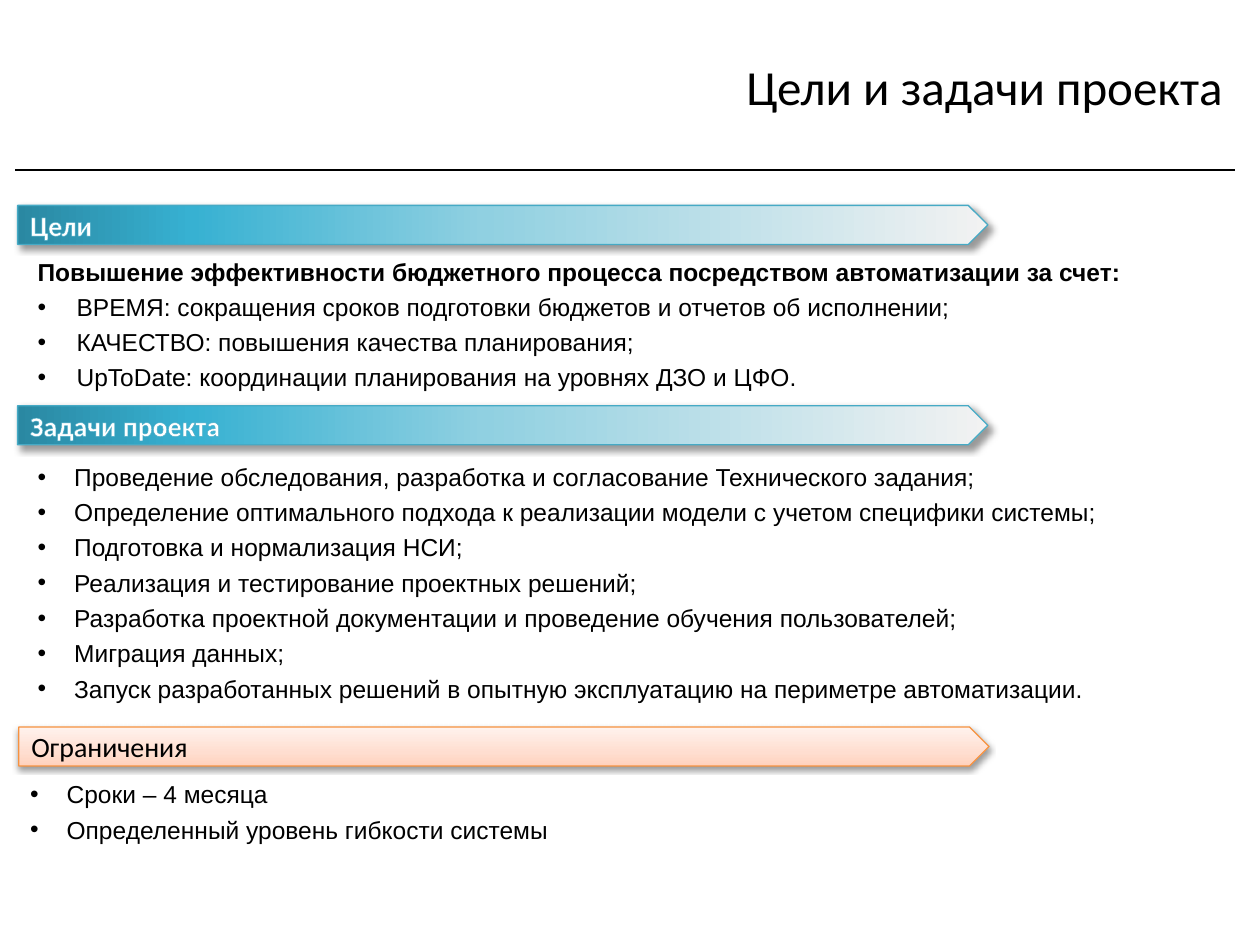
from lxml import etree
from pptx import Presentation
from pptx import util as u
from pptx.dml.color import RGBColor
from pptx.enum import shapes, text
from pptx.oxml import parse_xml
from pptx.oxml.ns import qn

NS = 'xmlns:a="http://schemas.openxmlformats.org/drawingml/2006/main"'
TEAL = [(0, "2A88A2"), (18, "37B1D2"), (48, "90D0E1"), (100, "F2F2F2")]
PEACH = [(0, "FFD2BD"), (35, "FFDED0"), (100, "FFF2ED")]


def rgb(value):
    return RGBColor.from_string(value)


class Deck:
    heading_font = "Calibri"
    body_font = "Arial"
    ink = "000000"

    def __init__(self, prs):
        self.s = prs.slides.add_slide(prs.slide_layouts[6])

    def run(self, p, words, size, font, color=None, bold=False):
        r = p.add_run()
        r.text = words
        r.font.size = u.Pt(size)
        r.font.name = font
        r.font.bold = bold
        r.font.color.rgb = rgb(color or self.ink)
        return r

    def rule(self, left, right, y):
        c = self.s.shapes.add_connector(
            shapes.MSO_CONNECTOR.STRAIGHT,
            u.Inches(left), u.Inches(y), u.Inches(right), u.Inches(y))
        c.line.color.rgb = rgb(self.ink)
        c.line.width = u.Pt(0.75)
        etree.SubElement(c._element.spPr, qn("a:effectLst"))

    def box(self, left, top, width, height):
        tf = self.s.shapes.add_textbox(
            u.Inches(left), u.Inches(top), u.Inches(width), u.Inches(height)).text_frame
        tf.word_wrap = True
        return tf

    def title(self, words, *area):
        tf = self.box(*area)
        tf.vertical_anchor = text.MSO_ANCHOR.MIDDLE
        p = tf.paragraphs[0]
        p.alignment = text.PP_ALIGN.RIGHT
        self.run(p, words, 28, self.heading_font)

    def banner(self, words, left, top, stops, angle, line, shadow, color, outline=None):
        sp = self.s.shapes.add_shape(
            shapes.MSO_SHAPE.PENTAGON,
            u.Inches(left), u.Inches(top), u.Inches(7.7), u.Inches(0.31))
        sp.line.color.rgb = rgb(line)
        sp.line.width = u.Pt(0.75)
        gs = "".join(f'<a:gs pos="{pos * 1000}"><a:srgbClr val="{c}"/></a:gs>'
                     for pos, c in stops)
        spPr = sp._element.spPr
        spPr.find(qn("a:prstGeom")).addnext(parse_xml(
            f'<a:gradFill {NS} rotWithShape="1"><a:gsLst>{gs}</a:gsLst>'
            f'<a:lin ang="{angle * 60000}" scaled="0"/></a:gradFill>'))
        alpha, blur, dist, direction = shadow
        spPr.append(parse_xml(
            f'<a:effectLst {NS}><a:outerShdw blurRad="{u.Pt(blur)}" dist="{u.Pt(dist)}" '
            f'dir="{direction * 60000}" rotWithShape="0"><a:srgbClr val="{self.ink}">'
            f'<a:alpha val="{alpha * 1000}"/></a:srgbClr></a:outerShdw></a:effectLst>'))
        tf = sp.text_frame
        tf.vertical_anchor = text.MSO_ANCHOR.MIDDLE
        p = tf.paragraphs[0]
        p.alignment = text.PP_ALIGN.LEFT
        r = self.run(p, words, 16, self.heading_font, color, bold=bool(outline))
        if outline:
            r.font._element.insert(0, parse_xml(
                f'<a:ln {NS} w="{u.Pt(0.8)}"><a:solidFill><a:srgbClr val="{outline}"/>'
                '</a:solidFill></a:ln>'))

    def bullets(self, items, left, top, width, height, indent, lead=None):
        tf = self.box(left, top, width, height)
        tf.auto_size = text.MSO_AUTO_SIZE.SHAPE_TO_FIT_TEXT
        lines = ([lead] if lead else []) + items
        for i, words in enumerate(lines):
            p = tf.add_paragraph() if i else tf.paragraphs[0]
            if words != lead:
                pPr = p._p.get_or_add_pPr()
                pPr.set("marL", str(u.Inches(indent)))
                pPr.set("indent", str(-u.Inches(indent)))
                etree.SubElement(pPr, qn("a:buFont"), typeface=self.body_font)
                etree.SubElement(pPr, qn("a:buChar"), char="•")
            p.line_spacing = 1.2
            self.run(p, words, 14, self.body_font, bold=words == lead)


def main():
    prs = Presentation()
    prs.slide_width, prs.slide_height = u.Inches(10), u.Inches(7.5)
    deck = Deck(prs)
    deck.rule(0.12, 9.8, 1.35)
    deck.title("Цели и задачи проекта", 2.68, 0.1, 7.12, 1.16)
    for words, top in (("Цели", 1.63), ("Задачи проекта", 3.22)):
        deck.banner(words, 0.14, top, TEAL, 0, "46AAC5", (40, 4, 3, 45), "FFFFFF", "4BACC6")
    deck.banner("Ограничения", 0.15, 5.77, PEACH, 270, "F69240", (38, 3.1, 1.6, 90), "000000")
    deck.bullets([
        "ВРЕМЯ: сокращения сроков подготовки бюджетов и отчетов об исполнении;",
        "КАЧЕСТВО: повышения качества планирования;",
        "UpToDate: координации планирования на уровнях ДЗО и ЦФО.",
    ], 0.2, 1.94, 9.6, 1.51, 0.31,
        lead="Повышение эффективности бюджетного процесса посредством автоматизации за счет:")
    deck.bullets([
        "Проведение обследования, разработка и согласование Технического задания;",
        "Определение оптимального подхода к реализации модели с учетом специфики системы;",
        "Подготовка и нормализация НСИ;",
        "Реализация и тестирование проектных решений;",
        "Разработка проектной документации и проведение обучения пользователей;",
        "Миграция данных;",
        "Запуск разработанных решений в опытную эксплуатацию на периметре автоматизации.",
    ], 0.2, 3.57, 8.82, 2.08, 0.29)
    deck.bullets([
        "Сроки – 4 месяца",
        "Определенный уровень гибкости системы",
    ], 0.14, 6.09, 8.82, 0.67, 0.29)
    prs.save("out.pptx")


if __name__ == "__main__":
    main()
